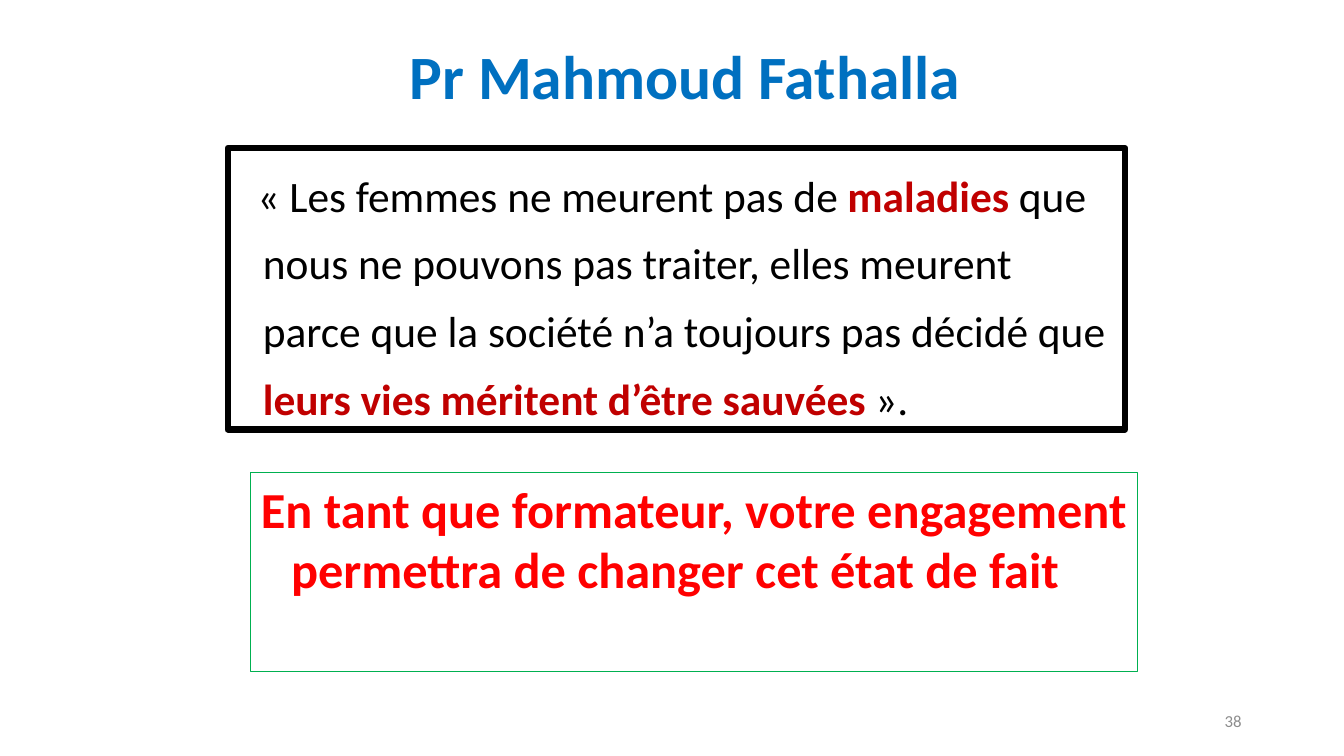
from pptx import Presentation
from pptx.dml.color import RGBColor
from pptx.enum.shapes import MSO_SHAPE as Shape
from pptx.enum.text import MSO_ANCHOR as Anchor, PP_ALIGN as Align
from pptx.util import Pt

FONT = "Calibri"
BLACK, BLUE, GREEN, GREY = "000000", "0070C0", "00B050", "8C8C8C"
DARK_RED, RED = "C00000", "FF0000"


def color(value):
    return RGBColor.from_string(value)


def write(shape, runs, size, align=Align.LEFT, anchor=Anchor.TOP,
          line_spacing=None, space_before=0, margin=0, indent=0):
    """Fill a shape with one paragraph of (text, colour, bold) runs."""
    frame = shape.text_frame
    frame.word_wrap = True
    frame.vertical_anchor = anchor
    paragraph = frame.paragraphs[0]
    paragraph.alignment = align
    paragraph.space_before = Pt(space_before)
    if line_spacing:
        paragraph.line_spacing = line_spacing
    properties = paragraph._p.get_or_add_pPr()
    properties.set("marL", str(Pt(margin)))
    properties.set("indent", str(Pt(indent)))
    for text, hex_color, bold in runs:
        run = paragraph.add_run()
        run.text = text
        run.font.name = FONT
        run.font.size = Pt(size)
        run.font.bold = bold
        run.font.color.rgb = color(hex_color)


def add_text(slide, box, runs, size, **layout):
    shape = slide.shapes.add_textbox(*map(Pt, box))
    write(shape, runs, size, **layout)


def add_frame(slide, box, line_color, line_width):
    """Add an unfilled rectangle with an outline."""
    shape = slide.shapes.add_shape(Shape.RECTANGLE, *map(Pt, box))
    shape.shadow.inherit = False
    shape.fill.background()
    shape.line.color.rgb = color(line_color)
    shape.line.width = Pt(line_width)
    return shape


def add_title(slide, box):
    add_text(slide, box, [("Pr Mahmoud Fathalla", BLUE, True)], 44,
             align=Align.CENTER, anchor=Anchor.MIDDLE, line_spacing=0.9)


def add_quote(slide, box):
    runs = [
        ("« Les femmes ne meurent pas de ", BLACK, False),
        ("maladies ", DARK_RED, True),
        ("que nous ne pouvons pas traiter, elles meurent parce que la "
         "société n’a toujours pas décidé que ", BLACK, False),
        ("leurs vies méritent d’être sauvées", DARK_RED, True),
        ("\N{NO-BREAK SPACE}».", BLACK, False),
    ]
    write(add_frame(slide, box, BLACK, 4.5), runs, 31, line_spacing=1.3,
          space_before=10, margin=18, indent=-4)


def add_message(slide, box):
    text = ("En tant que formateur, votre engagement permettra de changer "
            "cet état de fait")
    write(add_frame(slide, box, GREEN, 0.75), [(text, RED, True)], 36,
          space_before=7.2, margin=21.6, indent=-21.6)


def add_slide_number(slide, box):
    add_text(slide, box, [("38", GREY, False)], 12,
             align=Align.RIGHT, anchor=Anchor.MIDDLE)


def main():
    presentation = Presentation()
    presentation.slide_width, presentation.slide_height = Pt(960), Pt(540)
    slide = presentation.slides.add_slide(presentation.slide_layouts[6])

    # Boxes are left, top, width, height
    add_title(slide, (168.5, 18, 642, 78))
    add_quote(slide, (162.7, 105.8, 641, 201))
    add_message(slide, (179.3, 337.7, 633.6, 141.8))
    add_slide_number(slide, (678, 500.5, 216, 28.8))

    presentation.save("out.pptx")


if __name__ == "__main__":
    main()
